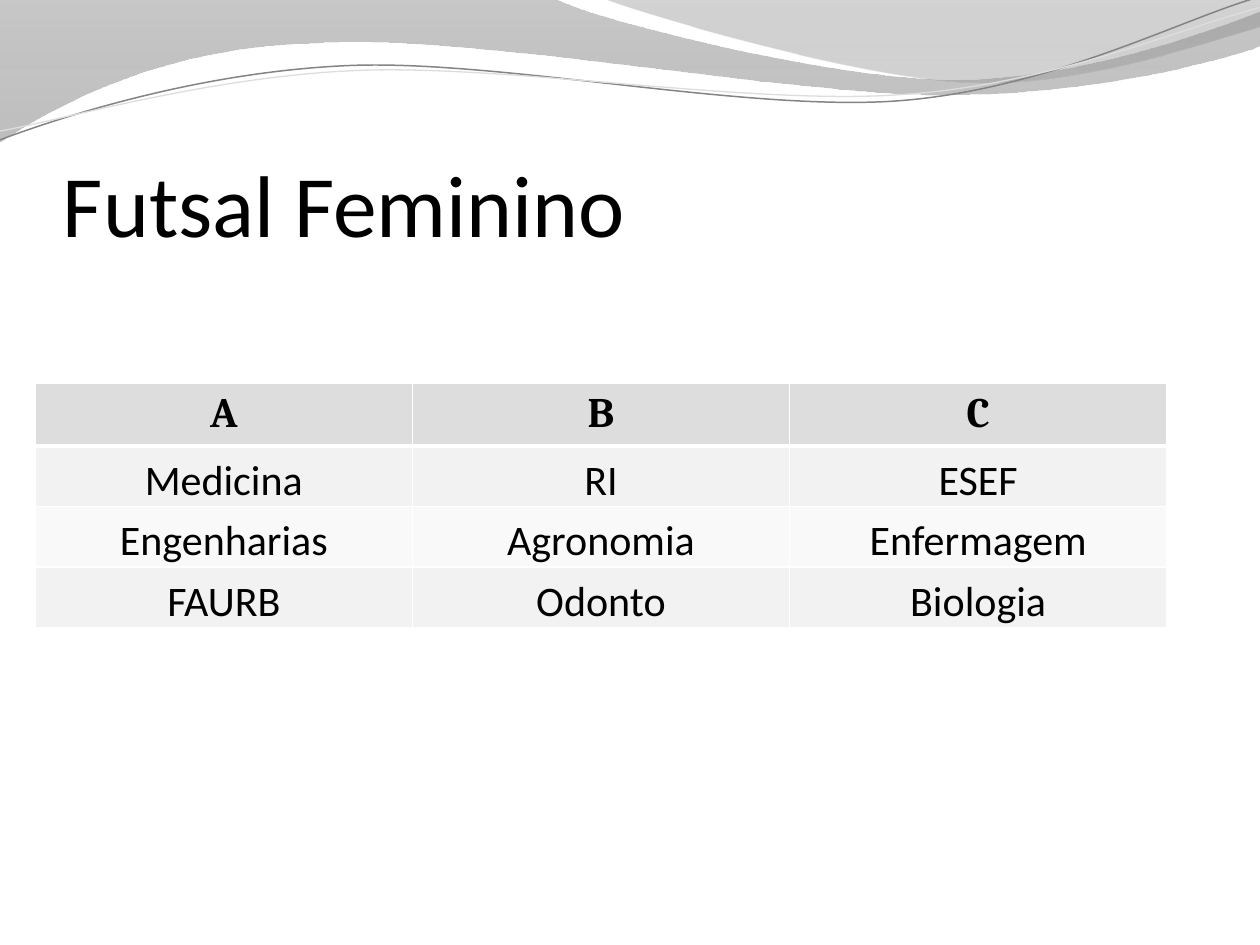
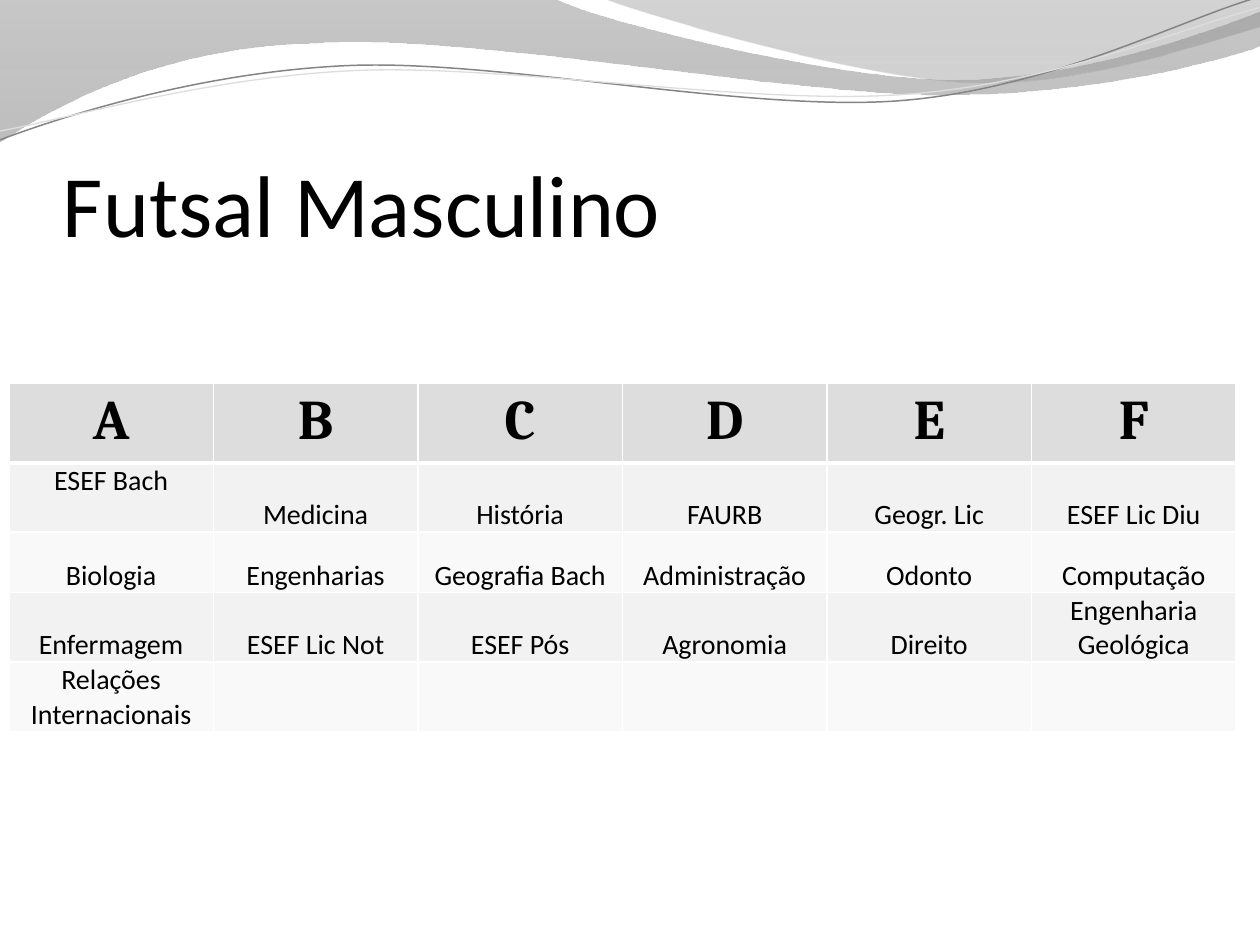
from math import cos, radians, sin

from lxml.etree import SubElement
from pptx import Presentation
from pptx.dml.color import RGBColor
from pptx.enum.text import MSO_ANCHOR as Anchor, PP_ALIGN as Align
from pptx.oxml.ns import qn
from pptx.util import Inches, Pt

COLORS = {
    "text": "000000",
    "border": "FFFFFF",
    "header": "DDDDDD",
    "odd_row": "F2F2F2",
    "even_row": "F9F9F9",
    "dark_line": "848484",
    "light_line": "DDDDDD",
    "wide_top": "848484",
    "wide_bottom": "888888",
    "corner_top": "6F6F6F",
    "corner_bottom": "9D9D9D",
}
BODY_FONT, HEADER_FONT = "Calibri", "Cambria"
CURVE_TILT = -2.7

# An outline is a start point, then segments: one point for a straight line,
# two control points and an end point for a curve.
WIDE_WAVE = [
    (0, 0),
    [(4.4, -0.01)],
    [(4.76, 0.17), (6.64, 0.63), (7.58, 0.63)],
    [(8.53, 0.63), (9.58, 0.26), (10, 0.09)],
    [(10.01, 0.36)],
    [(9.83, 0.44), (8.7, 0.76), (7.46, 0.75)],
    [(6.22, 0.75), (3.82, 0.28), (2.57, 0.34)],
    [(1.29, 0.36), (0.46, 0.83), (-0.01, 1.13)],
    [(0, 0)],
]
CORNER_WAVE = [
    (4.79, -0.01),
    [(5.09, 0.11), (6.82, 0.62), (7.69, 0.65)],
    [(8.56, 0.69), (9.61, 0.32), (10, 0.21)],
    [(10, 0)],
    [(4.79, -0.01)],
]
DARK_CURVE = [
    (0, 1.11),
    [(0.48, 0.93), (1.58, 0.57), (2.77, 0.52)],
    [(3.95, 0.47), (5.93, 0.89), (7.13, 0.8)],
    [(8.33, 0.71), (9.38, 0.15), (9.98, -0.02)],
]
LIGHT_CURVE = [
    (0, 1.04),
    [(0.47, 0.96), (1.64, 0.61), (2.83, 0.56)],
    [(4.03, 0.51), (5.97, 0.84), (7.17, 0.75)],
    [(8.36, 0.67), (9.41, 0.21), (10, 0.06)],
]

WOMEN_GROUPS = [
    ["A", "B", "C"],
    ["Medicina", "RI", "ESEF"],
    ["Engenharias", "Agronomia", "Enfermagem"],
    ["FAURB", "Odonto", "Biologia"],
]
MEN_GROUPS = [
    ["A", "B", "C", "D", "E", "F"],
    ["ESEF Bach", "Medicina", "História", "FAURB", "Geogr. Lic", "ESEF Lic Diu"],
    ["Biologia", "Engenharias", "Geografia Bach", "Administração", "Odonto", "Computação"],
    ["Enfermagem", "ESEF Lic Not", "ESEF Pós", "Agronomia", "Direito", "Engenharia Geológica"],
    ["Relações\nInternacionais", "", "", "", "", ""],
]


def color(name):
    return RGBColor.from_string(COLORS[name])


def write_text(frame, text, *, size, font=BODY_FONT, bold=False, align=Align.LEFT):
    """Fill a text frame, one paragraph per line of text."""
    for index, line in enumerate(text.split("\n")):
        para = frame.add_paragraph() if index else frame.paragraphs[0]
        para.alignment = align
        span = para.add_run()
        span.text = line
        span.font.size = Pt(size)
        span.font.name = font
        span.font.bold = bold
        span.font.color.rgb = color("text")


def rotate(point, center, degrees):
    angle = radians(degrees)
    across, down = point[0] - center[0], point[1] - center[1]
    return (center[0] + across * cos(angle) - down * sin(angle),
            center[1] + across * sin(angle) + down * cos(angle))


def bend_segments(shape, segments):
    """Turn every three lines that stand for a curve into one Bézier curve."""
    lines = iter(list(shape._element.iter(qn("a:lnTo"))))
    for segment in segments:
        first = next(lines)
        if len(segment) == 3:
            first.tag = qn("a:cubicBezTo")
            for _ in range(2):
                extra = next(lines)
                first.append(extra[0])
                extra.getparent().remove(extra)


def add_outline(shapes, outline, close):
    start, *segments = outline
    points = [(Inches(x), Inches(y)) for segment in segments for x, y in segment]
    builder = shapes.build_freeform(Inches(start[0]), Inches(start[1]))
    builder.add_line_segments(points, close=close)
    shape = builder.convert_to_shape()
    bend_segments(shape, segments)
    shape.shadow.inherit = False
    return shape


def add_wave(shapes, outline, stops):
    """Add a filled wave; each stop is (position, colour name, opacity percent)."""
    wave = add_outline(shapes, outline, close=True)
    wave.line.fill.background()
    wave.fill.gradient()
    wave.fill.gradient_angle = 270
    for stop, (position, name, _) in zip(wave.fill.gradient_stops, stops):
        stop.position = position
        stop.color.rgb = color(name)
    for tint, (_, _, opacity) in zip(wave._element.spPr.iter(qn("a:srgbClr")), stops):
        SubElement(tint, qn("a:alpha"), val=str(opacity * 1000))


def add_curve(shapes, outline, name, width, center):
    """Add a line drawn level and then tilted about its center."""
    start, *segments = outline
    level = [rotate(start, center, -CURVE_TILT)]
    level += [[rotate(point, center, -CURVE_TILT) for point in segment] for segment in segments]
    curve = add_outline(shapes, level, close=False)
    curve.rotation = CURVE_TILT
    curve.fill.background()
    curve.line.color.rgb = color(name)
    curve.line.width = Pt(width)


def add_banner(page):
    add_wave(page.shapes, WIDE_WAVE, [(0, "wide_top", 45), (1, "wide_bottom", 55)])
    add_wave(page.shapes, CORNER_WAVE, [(0, "corner_top", 30), (0.8, "corner_bottom", 45)])
    curves = page.shapes.add_group_shape().shapes
    add_curve(curves, DARK_CURVE, "dark_line", 0.85, center=(4.99, 0.575))
    add_curve(curves, LIGHT_CURVE, "light_line", 0.75, center=(5, 0.59))


def add_title(page, text):
    box = page.shapes.add_textbox(Inches(0.5), Inches(0.77), Inches(9), Inches(1.25))
    frame = box.text_frame
    frame.word_wrap = True
    frame.vertical_anchor = Anchor.BOTTOM
    frame.margin_left = frame.margin_right = frame.margin_bottom = 0
    frame.margin_top = Inches(0.05)
    write_text(frame, text, size=50)


def set_borders(cell, **widths):
    """Draw the cell's borders; widths in points are keyed L, R, T and B."""
    properties = cell._tc.get_or_add_tcPr()
    for side, width in widths.items():
        line = SubElement(properties, qn(f"a:ln{side}"), w=str(Pt(width)))
        fill = SubElement(line, qn("a:solidFill"))
        SubElement(fill, qn("a:srgbClr"), val=COLORS["border"])


def format_cell(cell, row, text, header_size, body_size):
    is_header = row == 0
    if is_header:
        set_borders(cell, L=1, R=1, T=1, B=3)
    cell.fill.solid()
    cell.fill.fore_color.rgb = color("header" if is_header else "odd_row" if row % 2 else "even_row")
    if is_header:
        write_text(cell.text_frame, text, size=header_size, font=HEADER_FONT,
                   bold=True, align=Align.CENTER)
    elif text:
        cell.vertical_anchor = Anchor.BOTTOM
        cell.margin_left = cell.margin_right = cell.margin_top = Inches(0.01)
        cell.margin_bottom = 0
        write_text(cell.text_frame, text, size=body_size, align=Align.CENTER)


def add_groups_table(page, groups, *, left, width, heights, header_size, body_size):
    columns = len(groups[0])
    table = page.shapes.add_table(
        len(groups), columns, Inches(left), Inches(3.04), Inches(width), Inches(sum(heights))
    ).table
    for column in table.columns:
        column.width = Inches(width / columns)
    for row, (names, height) in enumerate(zip(groups, heights)):
        table.rows[row].height = Inches(height)
        for column, name in enumerate(names):
            format_cell(table.cell(row, column), row, name, header_size, body_size)
    return table


def add_page(deck, title):
    page = deck.slides.add_slide(deck.slide_layouts[6])
    add_banner(page)
    add_title(page, title)
    return page


def main():
    deck = Presentation()
    deck.slide_width, deck.slide_height = Inches(10), Inches(7.5)

    women = add_page(deck, "Futsal Feminino")
    add_groups_table(women, WOMEN_GROUPS, left=0.28, width=8.98, heights=[0.48] * 4,
                     header_size=24, body_size=24)

    men = add_page(deck, "Futsal Masculino")
    men_table = add_groups_table(men, MEN_GROUPS, left=0.07, width=9.74,
                                 heights=[0.6, 0.55, 0.48, 0.55, 0.55],
                                 header_size=32, body_size=16)
    men_table.cell(1, 0).vertical_anchor = Anchor.TOP

    deck.save("out.pptx")


if __name__ == "__main__":
    main()
